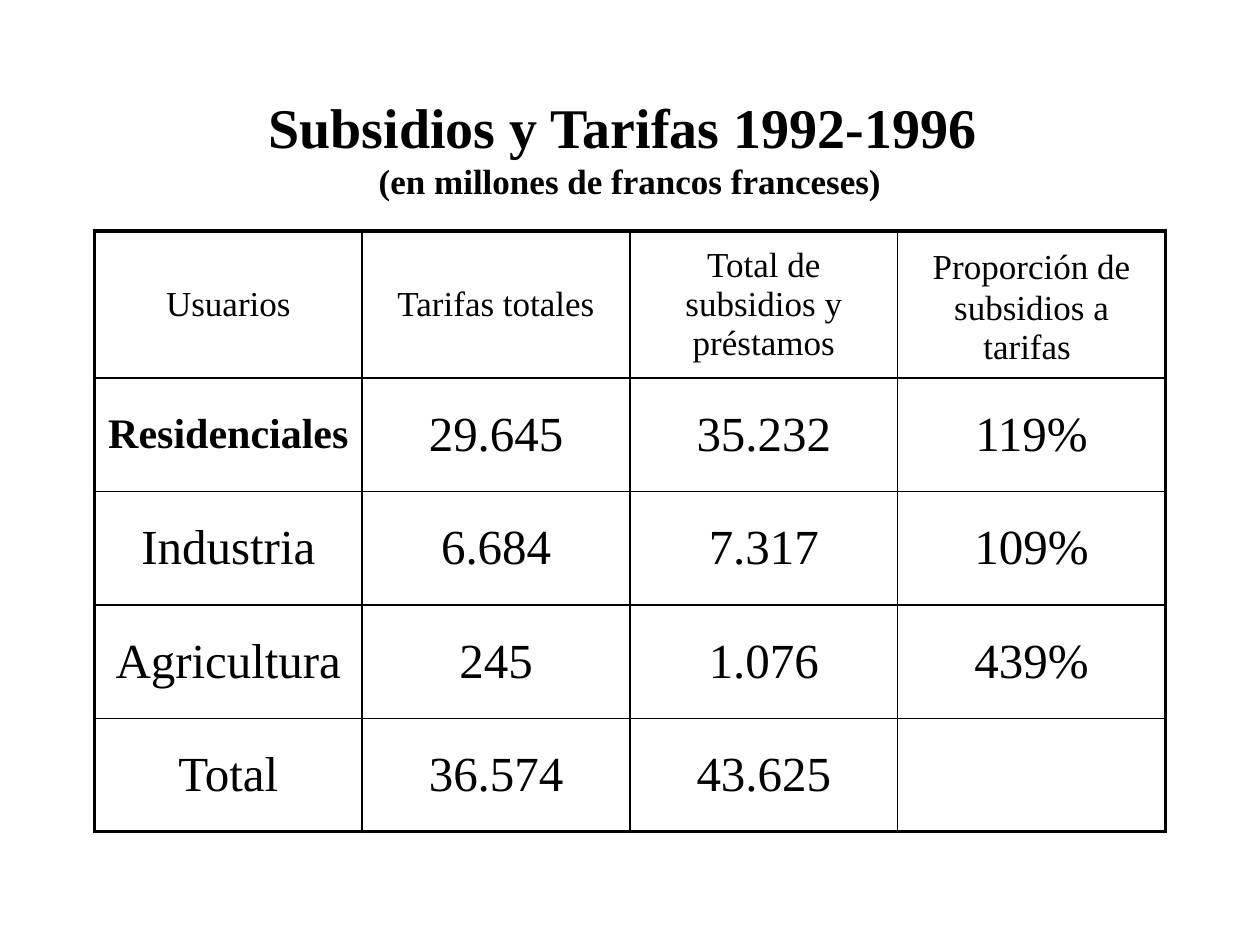
from lxml.etree import SubElement
from pptx import Presentation
from pptx.dml.color import RGBColor
from pptx.enum.text import MSO_ANCHOR, PP_ALIGN
from pptx.oxml.ns import qn
from pptx.util import Pt

BLACK = RGBColor(0, 0, 0)
FONT = "Times New Roman"


def add_run(para, text, size, bold=False):
    run = para.add_run()
    run.text = text
    font = run.font
    font.name, font.size, font.bold = FONT, Pt(size), bold
    font.color.rgb = BLACK


def add_edge(cell, side, width):
    line = SubElement(cell._tc.get_or_add_tcPr(), qn("a:ln" + side), w=str(Pt(width)))
    fill = SubElement(line, qn("a:solidFill"))
    SubElement(fill, qn("a:srgbClr"), val=str(BLACK))


deck = Presentation()
deck.slide_width, deck.slide_height = Pt(720), Pt(540)
slide = deck.slides.add_slide(deck.slide_layouts[6])

# Title and unit
box = slide.shapes.add_textbox(Pt(54), Pt(48), Pt(612), Pt(72))
frame = box.text_frame
frame.word_wrap = True
frame.vertical_anchor = MSO_ANCHOR.MIDDLE
para = frame.paragraphs[0]
para.alignment = PP_ALIGN.CENTER
add_run(para, "Subsidios y Tarifas 1992-1996 ", 32, True)
para.add_line_break()
add_run(para, "(en millones de francos franceses)", 20, True)

# Table content: each cell is a list of (text, size, bold) runs
heads = [
    [("Usuarios", 20)],
    [("Tarifas totales", 20)],
    [("Total de subsidios y préstamos", 20)],
    [("Proporción de", 20), (" ", 24), ("subsidios a tarifas ", 20)],
]
data = [
    ("Residenciales", "29.645", "35.232", "119%"),
    ("Industria", "6.684", "7.317", "109%"),
    ("Agricultura", "245", "1.076", "439%"),
    ("Total", "36.574", "43.625", ""),
]
rows = [heads] + [[[(text, 28)] if text else [] for text in row] for row in data]
rows[1][0] = [("Residenciales", 24, True)]

# Table grid
count, wide = len(rows), len(heads)
table = slide.shapes.add_table(count, wide, Pt(54), Pt(132), Pt(612), Pt(338)).table
table.first_row = table.horz_banding = False
for col in table.columns:
    col.width = Pt(153)
for i, row in enumerate(table.rows):
    row.height = Pt(64.8 if i else 78.8)

# Cells: thick outer frame, thin inner lines
for i, row in enumerate(rows):
    for j, runs in enumerate(row):
        cell = table.cell(i, j)
        cell.vertical_anchor = MSO_ANCHOR.MIDDLE
        edges = {"L": j == 0, "R": j == wide - 1, "T": i == 0, "B": i == count - 1}
        for side, outer in edges.items():
            add_edge(cell, side, 2.25 if outer else 1)
        cell.fill.background()
        para = cell.text_frame.paragraphs[0]
        para.alignment = PP_ALIGN.CENTER
        for run in runs:
            add_run(para, *run)

deck.save("out.pptx")
